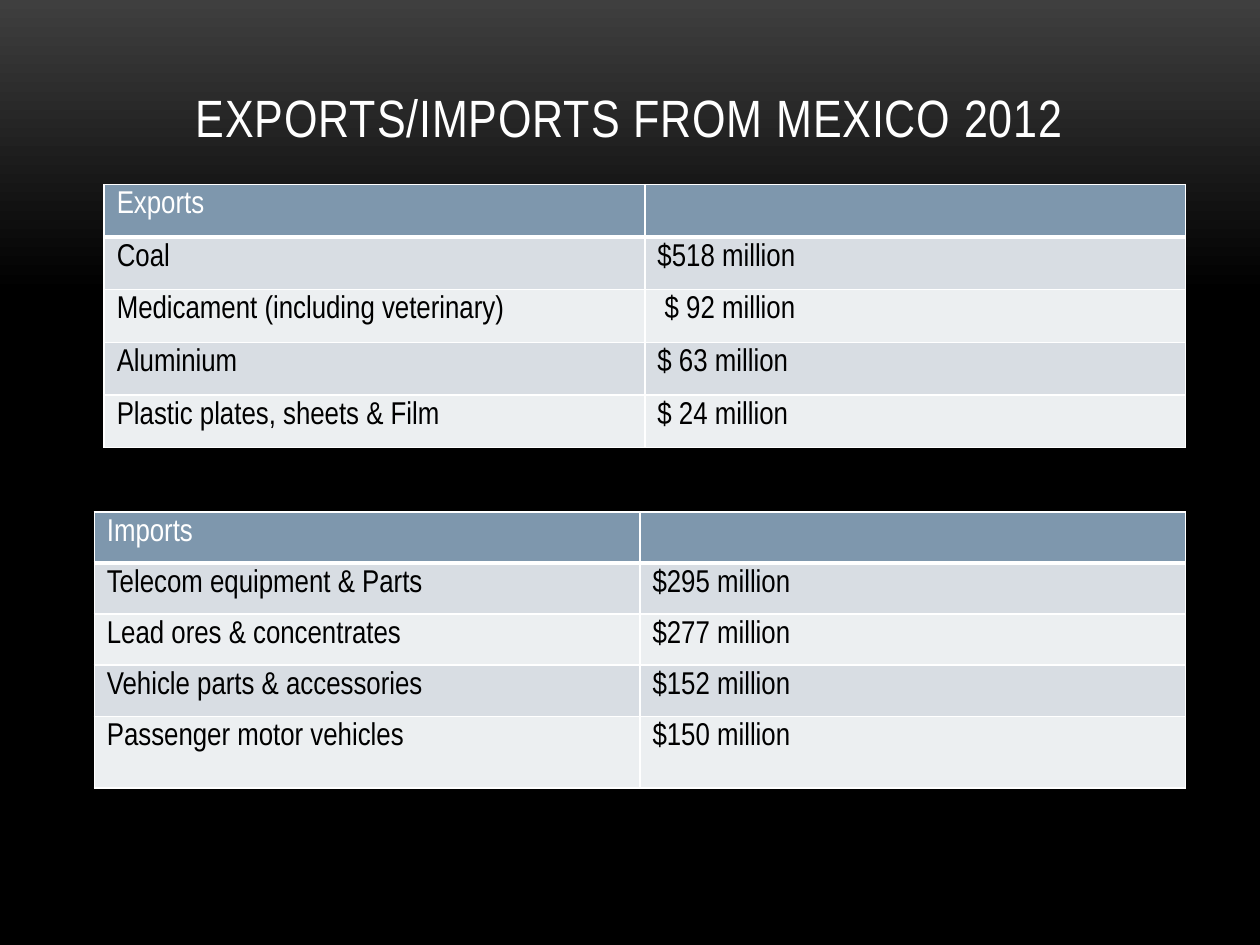
from lxml.etree import SubElement
from pptx import Presentation
from pptx.dml.color import RGBColor
from pptx.enum.text import MSO_ANCHOR, PP_ALIGN
from pptx.oxml.ns import qn
from pptx.util import Cm, Pt

WHITE = RGBColor(0xFF, 0xFF, 0xFF)
BLACK = RGBColor(0x00, 0x00, 0x00)
CHARCOAL = RGBColor(0x3F, 0x3F, 0x3F)
HEADER_BLUE = RGBColor(0x7E, 0x97, 0xAD)
BAND_DARK = RGBColor(0xD8, 0xDD, 0xE3)
BAND_LIGHT = RGBColor(0xEC, 0xEF, 0xF1)
FONT = "Arial Narrow"

EXPORTS = [
    ("Exports", ""),
    ("Coal", "$518 million"),
    ("Medicament (including veterinary)", " $ 92 million"),
    ("Aluminium", "$ 63 million"),
    ("Plastic plates, sheets & Film", "$ 24 million"),
]
IMPORTS = [
    ("Imports", ""),
    ("Telecom equipment & Parts", "$295 million"),
    ("Lead ores & concentrates", "$277 million"),
    ("Vehicle parts & accessories", "$152 million"),
    ("Passenger motor vehicles", "$150 million"),
]


def set_font(font, size, color):
    font.name = FONT
    font.size = Pt(size)
    font.color.rgb = color


def paint_background(slide):
    fill = slide.background.fill
    fill.gradient()
    fill.gradient_angle = 270
    for stop, color, position in zip(fill.gradient_stops, (CHARCOAL, BLACK), (0, 0.31)):
        stop.color.rgb = color
        stop.position = position


def add_title(slide, text, left, top, width, height):
    title = slide.shapes.title
    title.left, title.top, title.width, title.height = left, top, width, height
    text_frame = title.text_frame
    text_frame.text = text
    text_frame.vertical_anchor = MSO_ANCHOR.MIDDLE
    paragraph = text_frame.paragraphs[0]
    paragraph.alignment = PP_ALIGN.CENTER
    run = paragraph.runs[0]
    set_font(run.font, 30, WHITE)
    run.font._element.set("spc", "50")


def style_cell(cell, fill_color, text_color, bottom_width):
    # Borders come before the fill in the cell properties
    properties = cell._tc.get_or_add_tcPr()
    for side, width in (("L", 1), ("R", 1), ("T", 1), ("B", bottom_width)):
        line = SubElement(properties, qn(f"a:ln{side}"), w=str(Pt(width)))
        line_fill = SubElement(line, qn("a:solidFill"))
        SubElement(line_fill, qn("a:srgbClr"), val=str(WHITE))
    cell.fill.solid()
    cell.fill.fore_color.rgb = fill_color
    paragraph = cell.text_frame.paragraphs[0]
    set_font(paragraph.font, 18, text_color)
    for run in paragraph.runs:
        set_font(run.font, 18, text_color)


def add_trade_table(slide, rows, left, top, width, row_height, last_height):
    height = row_height * (len(rows) - 1) + last_height
    table = slide.shapes.add_table(len(rows), 2, left, top, width, height).table
    for column in table.columns:
        column.width = width // 2
    for row in table.rows:
        row.height = row_height
    table.rows[len(rows) - 1].height = last_height

    for row_index, values in enumerate(rows):
        is_header = row_index == 0
        band = BAND_DARK if row_index % 2 else BAND_LIGHT
        for column_index, value in enumerate(values):
            cell = table.cell(row_index, column_index)
            cell.text_frame.text = value
            style_cell(
                cell,
                HEADER_BLUE if is_header else band,
                WHITE if is_header else BLACK,
                3 if is_header else 1,
            )


def main():
    presentation = Presentation()
    presentation.slide_width = Cm(25.4)
    presentation.slide_height = Cm(19.05)
    slide = presentation.slides.add_slide(presentation.slide_layouts[5])

    paint_background(slide)
    add_title(slide, "EXPORTS/IMPORTS FROM MEXICO 2012",
              Cm(1.7), Cm(0.76), Cm(22), Cm(3.18))
    # The last import row is taller than the others
    add_trade_table(slide, IMPORTS, Cm(1.9), Cm(10.32), Cm(22), Cm(1.03), Cm(1.45))
    add_trade_table(slide, EXPORTS, Cm(2.1), Cm(3.72), Cm(21.8), Cm(1.06), Cm(1.06))

    presentation.save("out.pptx")


if __name__ == "__main__":
    main()
